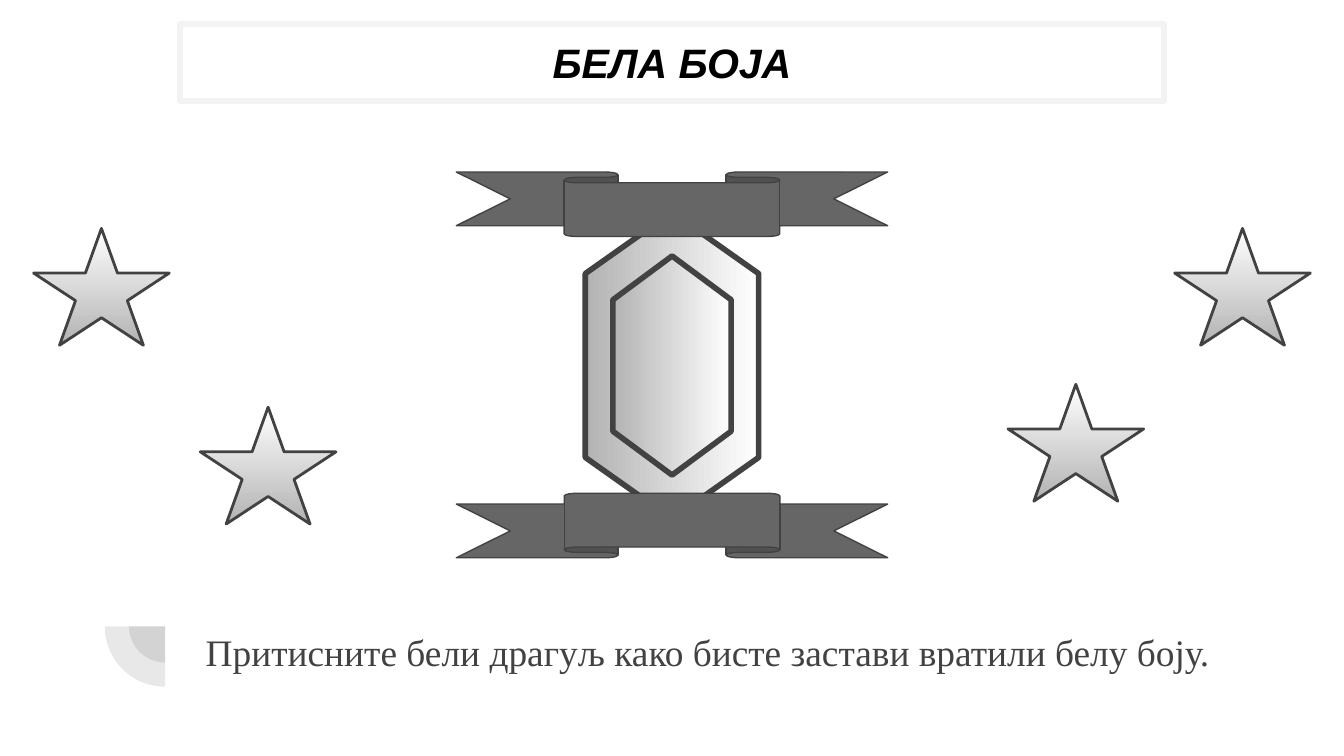
import pptx
import pptx.util
import pptx.dml.color
import pptx.enum.shapes
import pptx.enum.text
import pptx.oxml
import pptx.oxml.ns

Inches, Pt = pptx.util.Inches, pptx.util.Pt
SHAPE = pptx.enum.shapes.MSO_SHAPE
ALIGN = pptx.enum.text.PP_ALIGN
ANCHOR = pptx.enum.text.MSO_ANCHOR

# Content
SLIDE_W = 10
SLIDE_H = SLIDE_W * 9 / 16
DARK, RIBBON_GREY, FRAME = "424242", "666666", "F3F3F3"
SHEEN = ("FFFFFF", "B3B3B3")

TITLE = dict(
    text="БЕЛА БОЈА", box=(1.34, 0.18, 7.32, 0.57), color="000000",
    align=ALIGN.CENTER, anchor=ANCHOR.MIDDLE,
    font={"name": "Arial", "size": Pt(22), "bold": True, "italic": True})
HINT = dict(
    text="Притисните бели драгуљ како бисте застави вратили белу боју.",
    box=(1.43, 4.58, 8.21, 0.59), color=DARK,
    align=ALIGN.LEFT, anchor=ANCHOR.TOP,
    font={"name": "Times New Roman", "size": Pt(20), "bold": False, "italic": False})

CORNER_CENTRE, CORNER_SIZES = (1.23, 4.66), (0.54, 0.9)
GEM_CENTRE, GEM_FACETS = (SLIDE_W / 2, 2.72), [(2.28, 1.29), (1.63, 0.88)]
STAR_SIZE = (1.01, 0.87)
STAR_ROWS = [(0.25, 1.7, 1.7), (1.49, 3.03, 2.86)]  # side margin, left top, right top
RIBBON_SIZE = (3.21, 0.48)
RIBBONS = [(1.52, 0), (3.91, 180)]  # centre height, rotation


def rgb(value):
    return pptx.dml.color.RGBColor.from_string(value)


def add_centred(kind, centre, size, rotation=0):
    left, top = (c - s / 2 for c, s in zip(centre, size))
    shape = slide.shapes.add_shape(kind, *map(Inches, (left, top, *size)))
    shape.rotation = rotation
    shape.shadow.inherit = False
    return shape


def outline(shape, color, width):
    shape.line.color.rgb = rgb(color)
    shape.line.width = Pt(width)


def fill_solid(shape, color):
    shape.fill.solid()
    shape.fill.fore_color.rgb = rgb(color)


def fill_sheen(shape):
    shape.fill.gradient()
    shape.fill.gradient_angle = 270
    for stop, color in zip(shape.fill.gradient_stops, SHEEN):
        stop.color.rgb = rgb(color)


def set_text(holder, content):
    holder.left, holder.top, holder.width, holder.height = map(Inches, content["box"])
    frame = holder.text_frame
    frame_format = {
        "word_wrap": True, "auto_size": pptx.enum.text.MSO_AUTO_SIZE.NONE,
        "vertical_anchor": content["anchor"],
        **{f"margin_{side}": Inches(0.1) for side in ("left", "top", "right", "bottom")}}
    for name, value in frame_format.items():
        setattr(frame, name, value)
    frame.text = content["text"]
    paragraph = frame.paragraphs[0]
    paragraph.alignment = content["align"]
    paragraph.space_before = Pt(0)
    font = paragraph.runs[0].font
    for name, value in content["font"].items():
        setattr(font, name, value)
    font.color.rgb = rgb(content["color"])
    return paragraph


deck = pptx.Presentation()
deck.slide_width, deck.slide_height = Inches(SLIDE_W), Inches(SLIDE_H)
slide = deck.slides.add_slide(deck.slide_layouts[1])

# Title and hint
set_text(slide.shapes.title, TITLE)
outline(slide.shapes.title, FRAME, 3)
hint_line = set_text(slide.placeholders[1], HINT)
hint_props = hint_line._p.get_or_add_pPr()
hint_props.set("marL", "0")
hint_props.set("indent", "0")
hint_props.append(pptx.oxml.parse_xml(f"<a:buNone {pptx.oxml.ns.nsdecls('a')}/>"))

# Translucent quarter circles in the corner
for size in CORNER_SIZES:
    quarter = add_centred(SHAPE.PIE, CORNER_CENTRE, (size, size), 270)
    quarter.adjustments[0], quarter.adjustments[1] = 108, 162
    fill_solid(quarter, DARK)
    quarter.line.fill.background()
    tint = quarter.fill._xPr.find(".//" + pptx.oxml.ns.qn("a:srgbClr"))
    tint.append(pptx.oxml.parse_xml(f'<a:alpha {pptx.oxml.ns.nsdecls("a")} val="12000"/>'))

# Gem
for facet_size in GEM_FACETS:
    facet = add_centred(SHAPE.FLOWCHART_PREPARATION, GEM_CENTRE, facet_size, 90)
    fill_sheen(facet)
    outline(facet, DARK, 3)

# Stars, mirrored about the middle of the slide
star_w, star_h = STAR_SIZE
for margin, left_top, right_top in STAR_ROWS:
    inset = margin + star_w / 2
    for x, top in [(inset, left_top), (SLIDE_W - inset, right_top)]:
        star = add_centred(SHAPE.STAR_5_POINT, (x, top + star_h / 2), STAR_SIZE)
        fill_sheen(star)
        outline(star, DARK, 1.5)

# Ribbons above and below the gem
for y, rotation in RIBBONS:
    ribbon = add_centred(SHAPE.DOWN_RIBBON, (SLIDE_W / 2, y), RIBBON_SIZE, rotation)
    fill_solid(ribbon, RIBBON_GREY)
    outline(ribbon, DARK, 0.75)

deck.save("out.pptx")
